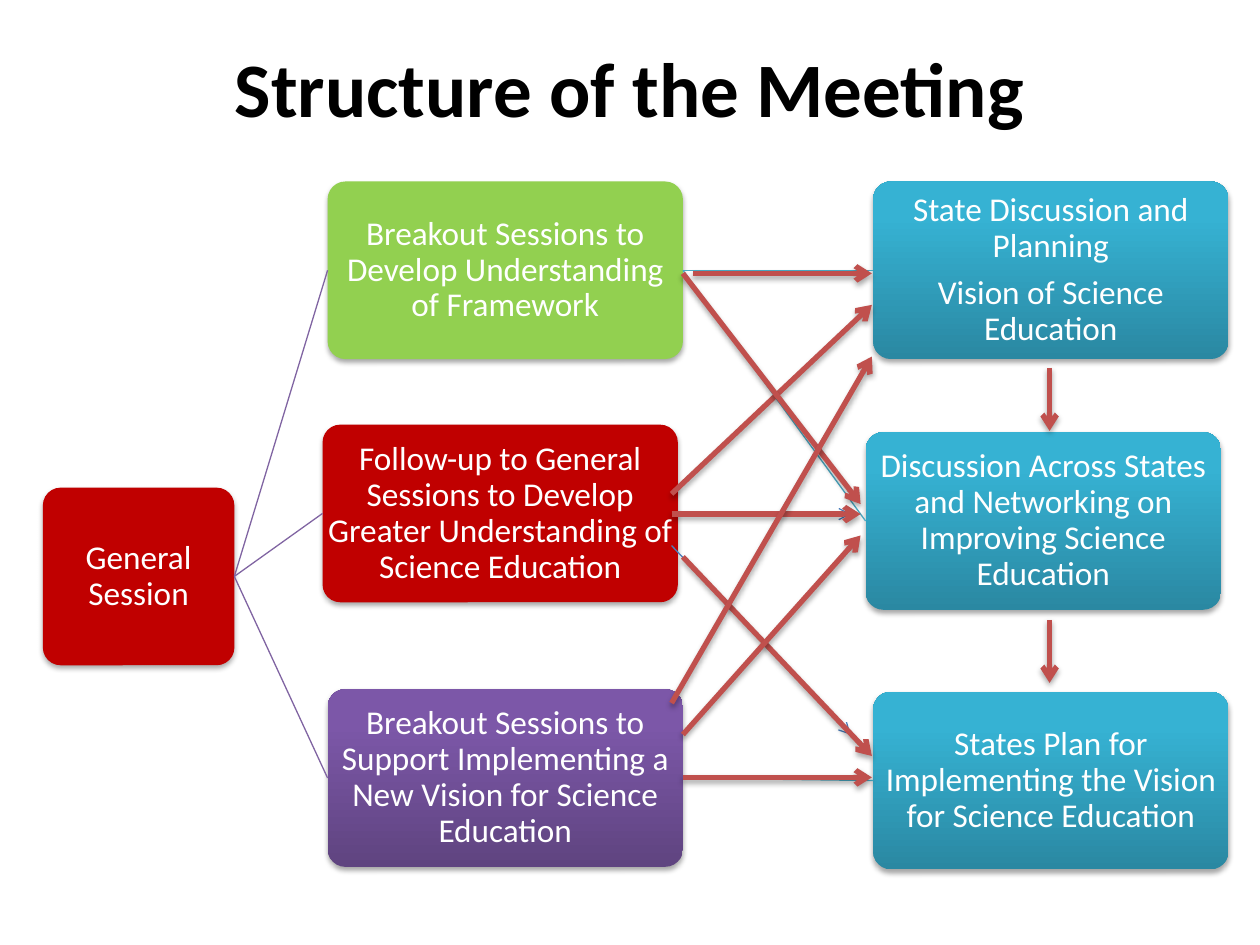
from pptx import Presentation
from pptx.dml.color import RGBColor
from pptx.enum.shapes import MSO_CONNECTOR, MSO_SHAPE
from pptx.enum.text import MSO_ANCHOR, PP_ALIGN
from pptx.oxml import parse_xml
from pptx.oxml.ns import nsdecls
from pptx.util import Inches, Pt

WHITE = RGBColor(0xFF, 0xFF, 0xFF)
BLACK = RGBColor(0x00, 0x00, 0x00)
RED = RGBColor(0xC0, 0x00, 0x00)
GREEN = RGBColor(0x92, 0xD0, 0x50)
PURPLE = (RGBColor(0x5F, 0x44, 0x80), RGBColor(0x7C, 0x57, 0xA8))
TEAL = (RGBColor(0x2A, 0x88, 0xA2), RGBColor(0x36, 0xB2, 0xD3))
PURPLE_LINE = RGBColor(0x80, 0x64, 0xA2)
TEAL_LINE = RGBColor(0x4B, 0xAC, 0xC6)
BLUE_LINE = RGBColor(0x4B, 0x7E, 0xBC)
ARROW_RED = RGBColor(0xC0, 0x50, 0x4D)

FONT = "Calibri"
TITLE = "Structure of the Meeting"
BOX_HEIGHT = 1.41
START_WIDTH, STEP_WIDTH = 1.52, 2.82
LEFT_COLUMN, RIGHT_COLUMN = 2.6, 6.93

BOXES = {
    "general": (0.34, 3.87, START_WIDTH, RED, ["General Session"]),
    "framework": (LEFT_COLUMN, 1.44, STEP_WIDTH, GREEN,
                  ["Breakout Sessions to Develop Understanding of Framework"]),
    "states": (RIGHT_COLUMN, 1.44, STEP_WIDTH, TEAL,
               ["State Discussion and Planning", "Vision of Science Education"]),
    "networking": (RIGHT_COLUMN - 0.06, 3.43, STEP_WIDTH, TEAL,
                   ["Discussion Across States and Networking on Improving Science Education"]),
    "followup": (LEFT_COLUMN - 0.04, 3.37, STEP_WIDTH, RED,
                 ["Follow-up to General Sessions to Develop Greater Understanding of Science Education"]),
    "support": (LEFT_COLUMN, 5.47, STEP_WIDTH, PURPLE,
                ["Breakout Sessions to Support Implementing a New Vision for Science Education"]),
    "plan": (RIGHT_COLUMN, 5.49, STEP_WIDTH, TEAL,
             ["States Plan for Implementing the Vision for Science Education"]),
}
LINKS = [
    ("general", "framework", PURPLE_LINE),
    ("general", "followup", PURPLE_LINE),
    ("general", "support", PURPLE_LINE),
    ("framework", "states", TEAL_LINE),
    ("framework", "networking", TEAL_LINE),
    ("support", "plan", TEAL_LINE),
]
THIN_ARROWS = [((5.33, 4.08), (6.75, 4.08)), ((5.33, 4.33), (6.75, 5.83))]
THICK_ARROWS = [
    ((5.42, 6.17), (6.92, 6.17)),
    ((5.33, 4.08), (6.83, 4.08)),
    ((5.42, 4.42), (6.92, 6)),
    ((5.33, 3.92), (6.92, 2.42)),
    ((5.5, 2.17), (6.92, 2.17)),
    ((8.33, 4.92), (8.33, 5.42)),
    ((8.33, 2.92), (8.33, 3.42)),
    ((5.42, 2.17), (6.83, 4)),
    ((5.42, 5.83), (6.83, 4.25)),
    ((5.33, 5.58), (6.92, 2.83)),
]


def set_effects(item, shadow):
    outer = ('<a:outerShdw blurRad="40000" dist="23000" dir="5400000" rotWithShape="0">'
             '<a:srgbClr val="000000"><a:alpha val="35000"/></a:srgbClr></a:outerShdw>')
    item._element.spPr.append(parse_xml(
        f'<a:effectLst {nsdecls("a")}>{outer if shadow else ""}</a:effectLst>'))


def paint(shape, colour):
    if isinstance(colour, RGBColor):
        shape.fill.solid()
        shape.fill.fore_color.rgb = colour
        return
    shape.fill.gradient()
    shape.fill.gradient_angle = 90
    for stop, position, shade in zip(shape.fill.gradient_stops, (0, 0.8), colour):
        stop.position = position
        stop.color.rgb = shade


def add_box(page, left, top, width, colour, texts):
    box = page.shapes.add_shape(MSO_SHAPE.ROUNDED_RECTANGLE, Inches(left), Inches(top),
                                Inches(width), Inches(BOX_HEIGHT))
    box.adjustments[0] = 0.1
    paint(box, colour)
    box.line.fill.background()
    set_effects(box, True)
    frame = box.text_frame
    frame.word_wrap = True
    frame.vertical_anchor = MSO_ANCHOR.MIDDLE
    frame.margin_left = frame.margin_right = frame.margin_top = frame.margin_bottom = 0
    frame.text = "\n".join(texts)
    for paragraph in frame.paragraphs:
        paragraph.alignment = PP_ALIGN.CENTER
        paragraph.line_spacing = 0.9
        paragraph.space_after = Pt(6.65)
        paragraph.font.name = FONT
        paragraph.font.size = Pt(19)
        paragraph.font.color.rgb = WHITE
    return box


def add_line(page, start, end, colour, weight, arrow=False, shadow=False):
    line = page.shapes.add_connector(MSO_CONNECTOR.STRAIGHT,
                                     *(Inches(value) for value in (*start, *end)))
    line.line.color.rgb = colour
    line.line.width = Pt(weight)
    if arrow:
        line.line._get_or_add_ln().append(
            parse_xml(f'<a:tailEnd {nsdecls("a")} type="arrow"/>'))
    set_effects(line, shadow)
    return line


def main():
    deck = Presentation()
    deck.slide_width, deck.slide_height = Inches(10), Inches(7.5)
    page = deck.slides.add_slide(deck.slide_layouts[5])

    title = page.shapes.title
    title.left, title.top, title.width, title.height = map(Inches, (0.5, 0.3, 9, 0.78))
    title.text_frame.text = TITLE
    title.text_frame.vertical_anchor = MSO_ANCHOR.MIDDLE
    heading = title.text_frame.paragraphs[0]
    heading.alignment = PP_ALIGN.CENTER
    heading.font.name = FONT
    heading.font.size = Pt(44)
    heading.font.bold = True
    heading.font.color.rgb = BLACK

    boxes = {name: add_box(page, *details) for name, details in BOXES.items()}
    for source, target, colour in LINKS:
        link = add_line(page, (0, 0), (1, 1), colour, 0.75)
        link.begin_connect(boxes[source], 3)
        link.end_connect(boxes[target], 1)
    for start, end in THIN_ARROWS:
        add_line(page, start, end, BLUE_LINE, 0.75, arrow=True)
    for start, end in THICK_ARROWS:
        add_line(page, start, end, ARROW_RED, 3, arrow=True, shadow=True)

    deck.save("out.pptx")


if __name__ == "__main__":
    main()
